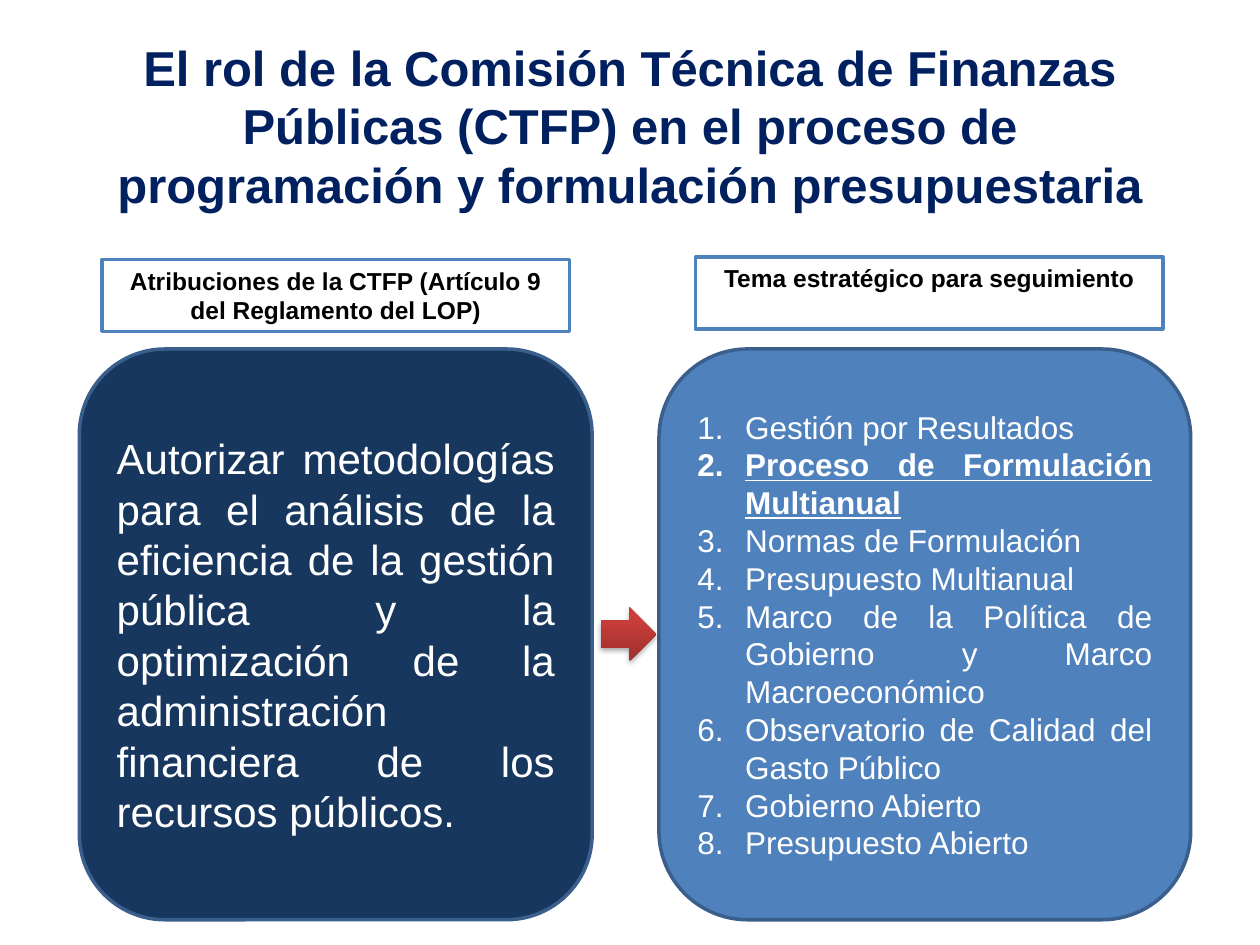
from dataclasses import dataclass

from lxml import etree
from pptx import Presentation
from pptx.dml.color import RGBColor
from pptx.enum.shapes import MSO_SHAPE
from pptx.enum.text import MSO_ANCHOR, PP_ALIGN
from pptx.oxml import parse_xml
from pptx.oxml.ns import qn
from pptx.util import Inches, Pt

RECT, ROUND = MSO_SHAPE.RECTANGLE, MSO_SHAPE.ROUNDED_RECTANGLE
ARROW = MSO_SHAPE.RIGHT_ARROW
TOP, MIDDLE = MSO_ANCHOR.TOP, MSO_ANCHOR.MIDDLE
CENTER, JUSTIFY = PP_ALIGN.CENTER, PP_ALIGN.JUSTIFY

COLS, ROWS = 100, 75
BLUE, NAVY, EDGE, WHITE = "4F81BD", "17375E", "3A5F8C", "FFFFFF"
NS = 'xmlns:a="http://schemas.openxmlformats.org/drawingml/2006/main"'
STOPS = ((0, "9C2F2D"), (80, "CB3E3A"), (100, "CE3B37"))
INDENT = Inches(0.38)

TITLE = ("El rol de la Comisión Técnica de Finanzas Públicas (CTFP) en el proceso "
         "de programación y formulación presupuestaria")
DUTY = ("Autorizar metodologías para el análisis de la eficiencia de la gestión "
        "pública y la optimización de la administración financiera de los "
        "recursos públicos.")
KEY = "Proceso de Formulación Multianual"
TOPICS = (
    "Gestión por Resultados",
    KEY,
    "Normas de Formulación",
    "Presupuesto Multianual",
    "Marco de la Política de Gobierno y Marco Macroeconómico",
    "Observatorio de Calidad del Gasto Público",
    "Gobierno Abierto",
    "Presupuesto Abierto",
)


@dataclass
class Area:
    """Place on the grid, in columns and rows."""
    col: float
    row: float
    wide: float
    high: float


@dataclass
class Panel:
    head: str
    label: Area
    body: Area
    fill: str
    lines: tuple
    size: int
    listed: bool = False


PANELS = (
    Panel("Tema estratégico para seguimiento", Area(55.2, 20.4, 37.1, 5.7),
          Area(52.3, 27.7, 42.2, 45.3), BLUE, TOPICS, 18, True),
    Panel("Atribuciones de la CTFP (Artículo 9 del Reglamento del LOP)",
          Area(8.1, 20.6, 37.1, 5.7), Area(6.3, 27.7, 40.7, 45.3), NAVY, (DUTY,), 24),
)

deck = Presentation()
deck.slide_width, deck.slide_height = Inches(10), Inches(7.5)
slide = deck.slides.add_slide(deck.slide_layouts[6])


def rgb(code: str) -> RGBColor:
    return RGBColor.from_string(code)


def place(area: Area) -> tuple:
    wide, high = deck.slide_width / COLS, deck.slide_height / ROWS
    return (round(area.col * wide), round(area.row * high),
            round(area.wide * wide), round(area.high * high))


def number(para) -> None:
    props = para._p.get_or_add_pPr()
    props.set("marL", str(INDENT))
    props.set("indent", str(-INDENT))
    etree.SubElement(props, qn("a:buFont"), typeface="+mj-lt")
    etree.SubElement(props, qn("a:buAutoNum"), type="arabicPeriod")


def write(shape, lines: tuple, *, size: int, color: str, align=CENTER,
          anchor=MIDDLE, bold: bool = False, listed: bool = False) -> None:
    frame = shape.text_frame
    frame.word_wrap = True
    frame.vertical_anchor = anchor
    for i, line in enumerate(lines):
        para = frame.add_paragraph() if i else frame.paragraphs[0]
        para.alignment = align
        if listed:
            number(para)
        run = para.add_run()
        run.text = line
        font = run.font
        font.name, font.size = "Arial", Pt(size)
        font.color.rgb = rgb(color)
        font.bold = bold or line == KEY
        font.underline = line == KEY


def block(kind, area: Area, fill: str, edge: str):
    shape = slide.shapes.add_shape(kind, *place(area))
    shape.shadow.inherit = False
    shape.fill.solid()
    shape.fill.fore_color.rgb = rgb(fill)
    shape.line.color.rgb = rgb(edge)
    shape.line.width = Pt(2)
    return shape


def arrow(area: Area) -> None:
    """Draw the red arrow, with its upward gradient and soft shadow."""
    shape = slide.shapes.add_shape(ARROW, *place(area))
    shape.shadow.inherit = False
    shape.line.fill.background()
    props = shape._element.spPr
    stops = "".join(f'<a:gs pos="{pos * 1000}"><a:srgbClr val="{code}"/></a:gs>'
                    for pos, code in STOPS)
    props.find(qn("a:prstGeom")).addnext(parse_xml(
        f'<a:gradFill {NS} rotWithShape="1"><a:gsLst>{stops}</a:gsLst>'
        '<a:lin ang="16200000" scaled="0"/></a:gradFill>'))
    props.find(qn("a:effectLst")).append(parse_xml(
        f'<a:outerShdw {NS} blurRad="{Pt(3.1)}" dist="{Pt(1.8)}" dir="5400000" '
        'rotWithShape="0"><a:srgbClr val="000000"><a:alpha val="35000"/>'
        '</a:srgbClr></a:outerShdw>'))


for panel in PANELS:
    body = block(ROUND, panel.body, panel.fill, EDGE)
    write(body, panel.lines, size=panel.size, color=WHITE, align=JUSTIFY,
          listed=panel.listed)
    label = block(RECT, panel.label, WHITE, BLUE)
    write(label, (panel.head,), size=14, color="000000", anchor=TOP, bold=True)

arrow(Area(47.7, 48.2, 4.4, 4.3))
title = slide.shapes.add_textbox(*place(Area(5, 3.7, 90, 12.5)))
write(title, (TITLE,), size=28, color="002060", bold=True)

deck.save("out.pptx")
